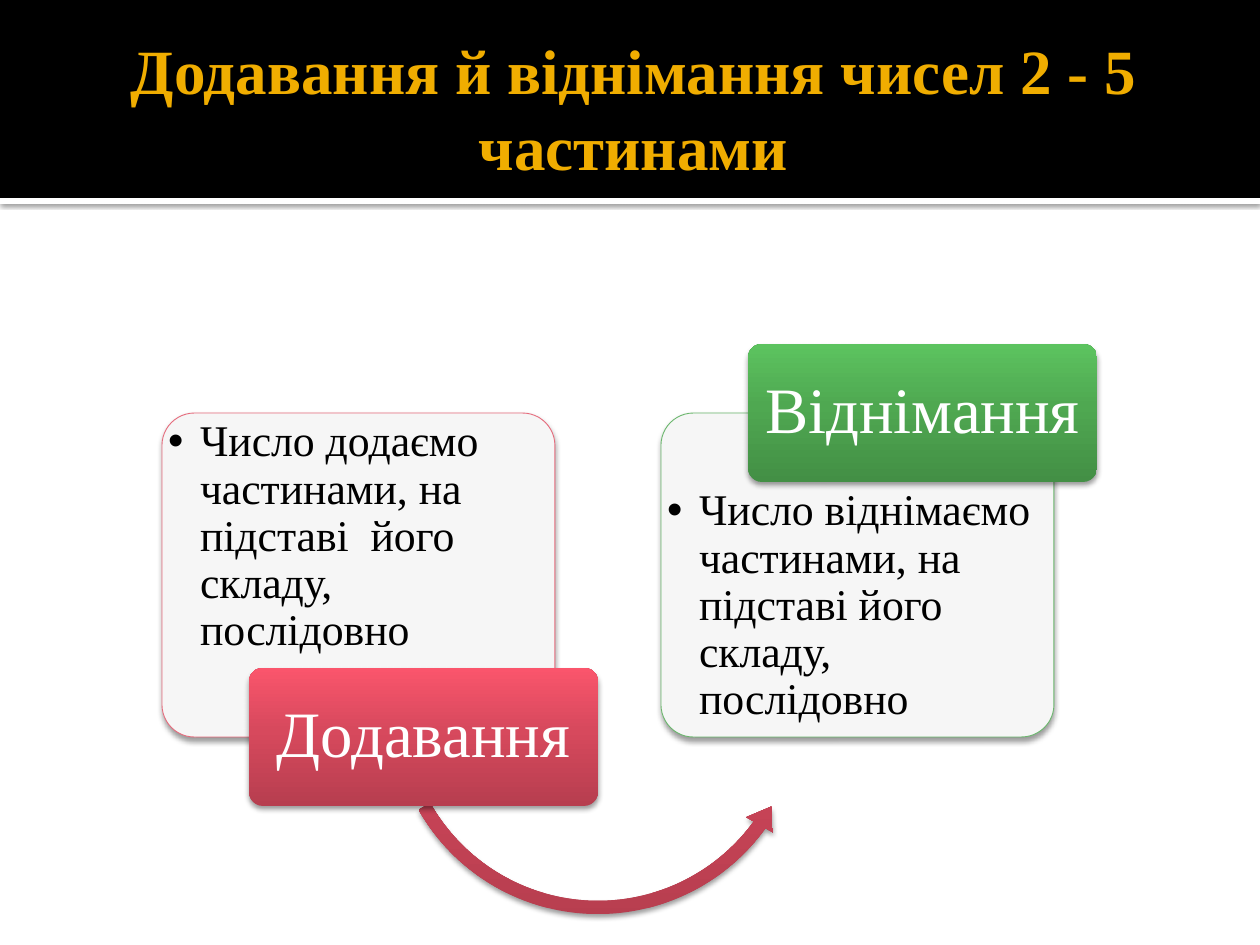
import copy

import pptx
import pptx.dml.color
import pptx.enum.shapes
import pptx.enum.text
import pptx.oxml
import pptx.oxml.ns
import pptx.util

PX = 914400 / 126
RGB = pptx.dml.color.RGBColor
SHAPES = pptx.enum.shapes.MSO_SHAPE
ALIGN = pptx.enum.text.PP_ALIGN
ANCHOR = pptx.enum.text.MSO_ANCHOR

BLACK = RGB(0x00, 0x00, 0x00)
WHITE = RGB(0xFF, 0xFF, 0xFF)
GOLD = RGB(0xF0, 0xAD, 0x00)
CARD_GRAY = RGB(0xF6, 0xF6, 0xF6)
RED_LINE = RGB(0xE6, 0x6C, 0x7D)
GREEN_LINE = RGB(0x6B, 0xB7, 0x6D)
RED_SHADES = [RGB(0xB7, 0x3E, 0x4F), RGB(0xD7, 0x49, 0x5D), RGB(0xFA, 0x55, 0x6C)]
GREEN_SHADES = [RGB(0x43, 0x8F, 0x45), RGB(0x4F, 0xA8, 0x51), RGB(0x5C, 0xC3, 0x5F)]
SOFT_SHADOW = (38, 3.1, 2)  # opacity in percent, blur and distance in points
BAND_SHADOW = (60, 2.5, 0.8)


def add_shape(kind, box, colors, line=None, shadow=None, adjustments=()):
    """Add a preset shape; three colors make a gradient from bottom to top."""
    shape = slide.shapes.add_shape(kind, *[round(value * PX) for value in box])
    for index, value in enumerate(adjustments):
        shape.adjustments[index] = value
    properties = shape._element.spPr
    if len(colors) == 1:
        shape.fill.solid()
        shape.fill.fore_color.rgb = colors[0]
    else:
        shape.fill.gradient()
        shape.fill.gradient_angle = 90
        stop_list = properties.find(".//" + pptx.oxml.ns.qn("a:gsLst"))
        stop_list.append(copy.deepcopy(stop_list[0]))
        for stop, color, position in zip(shape.fill.gradient_stops, colors, (0, 0.55, 1)):
            stop.color.rgb = color
            stop.position = position
    if line:
        shape.line.color.rgb = line
        shape.line.width = pptx.util.Pt(0.5)
    else:
        shape.line.fill.background()
    shape.shadow.inherit = False
    if shadow:
        opacity, blur, distance = shadow
        effects = properties.find(pptx.oxml.ns.qn("a:effectLst"))
        effects.append(pptx.oxml.parse_xml(
            f'<a:outerShdw {pptx.oxml.ns.nsdecls("a")} blurRad="{round(blur * 12700)}" '
            f'dist="{round(distance * 12700)}" dir="5400000" rotWithShape="0">'
            f'<a:srgbClr val="000000"><a:alpha val="{opacity * 1000}"/></a:srgbClr>'
            f'</a:outerShdw>'))
    return shape


def write_text(shape, text, size, color, box=None, bold=False, align=ALIGN.CENTER,
               anchor=ANCHOR.MIDDLE, margins=(6, 6, 6, 6), spacing=0.9, indent=0):
    """Write one formatted paragraph; a box moves the shape and brings it to the front."""
    if box:
        shape.left, shape.top, shape.width, shape.height = [round(value * PX) for value in box]
        slide.shapes._spTree.append(shape._element)
    frame = shape.text_frame
    frame.word_wrap = True
    frame.auto_size = pptx.enum.text.MSO_AUTO_SIZE.NONE
    frame.vertical_anchor = anchor
    frame.margin_left, frame.margin_top, frame.margin_right, frame.margin_bottom = [
        round(value * PX) for value in margins]
    frame.text = text
    paragraph = frame.paragraphs[0]
    paragraph.alignment = align
    paragraph.line_spacing = spacing
    paragraph.space_before = pptx.util.Pt(0)
    if indent:
        paragraph_properties = paragraph._p.get_or_add_pPr()
        paragraph_properties.set("marL", str(round(indent * PX)))
        paragraph_properties.set("indent", str(round(-indent * PX)))
    font = paragraph.runs[0].font
    font.name = "Times New Roman"
    font.size = pptx.util.Pt(size)
    font.bold = bold
    font.color.rgb = color


presentation = pptx.Presentation()
presentation.slide_width = round(1260 * PX)
presentation.slide_height = round(945 * PX)
slide = presentation.slides.add_slide(presentation.slide_layouts.get_by_name("Two Content"))
title, *lists = list(slide.placeholders)[:3]

# Header band with a white strip below it
add_shape(SHAPES.RECTANGLE, (0, 198, 1260, 6), [WHITE], shadow=BAND_SHADOW)
add_shape(SHAPES.RECTANGLE, (0, 0, 1260, 198), [BLACK])
write_text(title, "Додавання й віднімання чисел 2 - 5 частинами", 36, GOLD,
           box=(63, 21, 1134, 173), bold=True, margins=(13, 6, 6, 6), spacing=1.0)

# Arrow from the first step to the second
add_shape(SHAPES.LEFT_CIRCULAR_ARROW, (383, 493, 430, 430), RED_SHADES, shadow=SOFT_SHADOW,
          adjustments=(0.031, 3.781, 21.536, 90.245, 0.036))

# Cards, each with a list and a label straddling its bottom or top edge
CARD_TOP, CARD_WIDTH, CARD_HEIGHT = 413, 393, 324
LABEL_WIDTH, LABEL_HEIGHT, LABEL_SHIFT = 349, 138, 87
HALF_LABEL = LABEL_HEIGHT // 2
steps = [
    (162, "Додавання", "Число додаємо частинами, на підставі  його складу, послідовно",
     RED_LINE, RED_SHADES, CARD_TOP, CARD_TOP + CARD_HEIGHT),
    (661, "Віднімання", "Число віднімаємо частинами, на підставі його складу, послідовно",
     GREEN_LINE, GREEN_SHADES, CARD_TOP + HALF_LABEL, CARD_TOP),
]
for body, (left, name, text, line, shades, list_top, label_middle) in zip(lists, steps):
    add_shape(SHAPES.ROUNDED_RECTANGLE, (left, CARD_TOP, CARD_WIDTH, CARD_HEIGHT), [CARD_GRAY],
              line=line, shadow=SOFT_SHADOW, adjustments=(0.1,))
    write_text(body, text, 25, BLACK, box=(left, list_top, CARD_WIDTH, CARD_HEIGHT - HALF_LABEL),
               align=ALIGN.LEFT, anchor=ANCHOR.TOP, indent=32)
    label = add_shape(
        SHAPES.ROUNDED_RECTANGLE,
        (left + LABEL_SHIFT, label_middle - HALF_LABEL, LABEL_WIDTH, LABEL_HEIGHT),
        shades, shadow=SOFT_SHADOW, adjustments=(0.1,))
    write_text(label, name, 37, WHITE, margins=(10, 6, 10, 6))

presentation.save("out.pptx")
